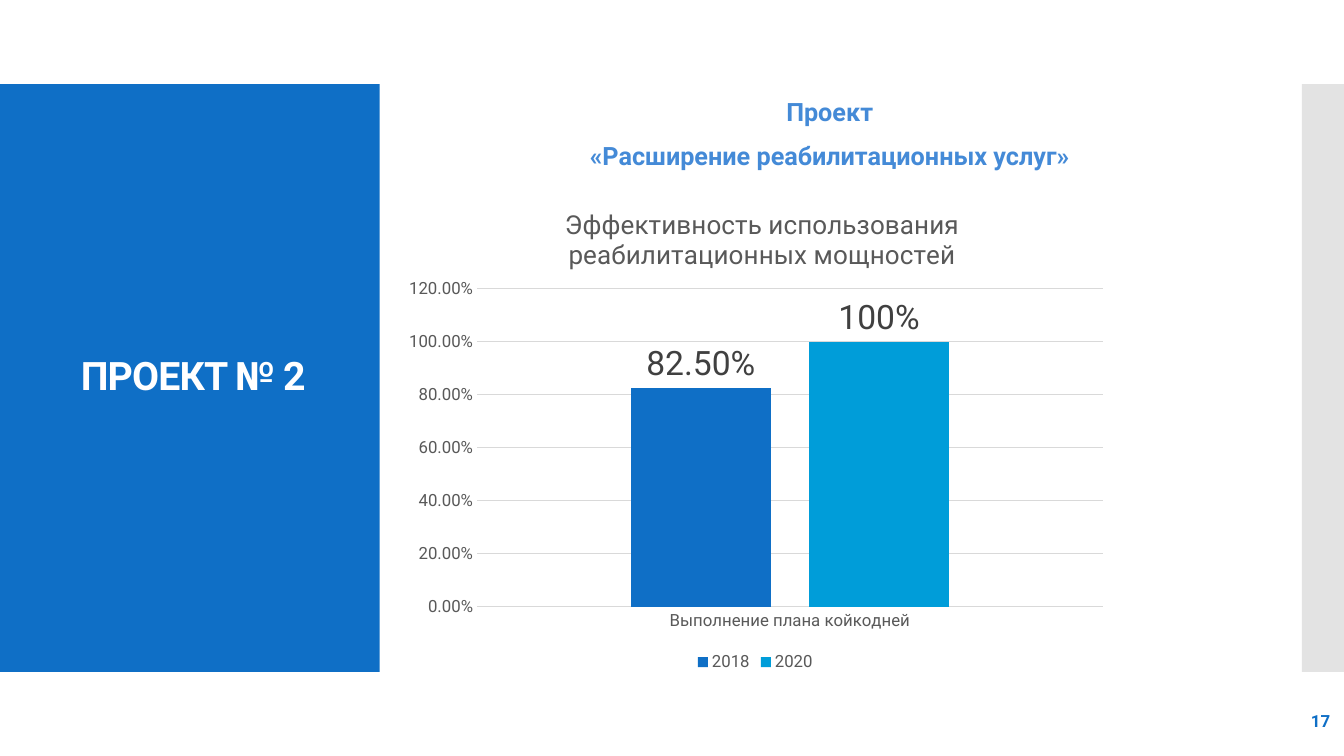
from lxml.etree import SubElement
from pptx import Presentation
from pptx.chart.data import CategoryChartData
from pptx.dml.color import RGBColor
from pptx.enum.chart import XL_CHART_TYPE, XL_LABEL_POSITION, XL_LEGEND_POSITION, XL_TICK_MARK
from pptx.enum.shapes import MSO_SHAPE
from pptx.enum.text import MSO_ANCHOR, MSO_AUTO_SIZE, PP_ALIGN
from pptx.oxml import parse_xml
from pptx.oxml.ns import nsdecls, qn
from pptx.util import Inches, Pt

COLORS = {
    "blue": "0F6FC6", "cyan": "009DD9", "heading": "448AD7", "white": "FFFFFF",
    "band": "C8C8C8", "grid": "D9D9D9", "axis": "595959", "label": "404040",
}
FONT = "Roboto"
COLUMNS, ROWS = 32, 18


def color(name):
    return RGBColor.from_string(COLORS[name])


def apply(target, values):
    for name, value in values.items():
        setattr(target, name, value)


def style_font(font, size, ink, bold=False):
    apply(font, {"name": FONT, "size": Pt(size), "bold": bold})
    font.color.rgb = color(ink)


def place(left, top, **size):
    """Manual chart layout, in shares of the chart's size."""
    values = {"xMode": "edge", "yMode": "edge", "x": left, "y": top, **size}
    inner = '<c:layoutTarget val="inner"/>' if size else ""
    marks = "".join(f'<c:{key} val="{value}"/>' for key, value in values.items())
    return parse_xml(f'<c:layout {nsdecls("c")}><c:manualLayout>{inner}{marks}'
                     "</c:manualLayout></c:layout>")


class SlideBuilder:
    def __init__(self, deck, page):
        self.page = page
        self.cell_width = deck.slide_width / COLUMNS
        self.cell_height = deck.slide_height / ROWS

    def box(self, left, top, width, height):
        return (round(left * self.cell_width), round(top * self.cell_height),
                round(width * self.cell_width), round(height * self.cell_height))

    def panel(self, grid, ink, opacity=None):
        shape = self.page.shapes.add_shape(MSO_SHAPE.RECTANGLE, *self.box(*grid))
        shape.shadow.inherit = False
        shape.fill.solid()
        shape.fill.fore_color.rgb = color(ink)
        shape.line.fill.background()
        if opacity:
            tone = shape.fill._xPr.find(qn("a:solidFill"))[0]
            SubElement(tone, qn("a:alpha")).set("val", str(opacity * 1000))
        # Panels lie behind the placeholders
        self.page.shapes._spTree.insert(2, shape._element)

    def text(self, shape, grid, lines, size, ink, align=PP_ALIGN.CENTER,
             anchor=MSO_ANCHOR.MIDDLE, before=0, spacing=0.9, tracking=None):
        apply(shape, dict(zip(("left", "top", "width", "height"), self.box(*grid))))
        frame = shape.text_frame
        frame.text = "\n".join(lines)
        apply(frame, {"word_wrap": True, "auto_size": MSO_AUTO_SIZE.NONE,
                      "vertical_anchor": anchor})
        for para in frame.paragraphs:
            apply(para, {"alignment": align, "line_spacing": spacing,
                         "space_before": Pt(before)})
            properties = para._p.get_or_add_pPr()
            properties.set("marL", "0")
            properties.set("indent", "0")
            SubElement(properties, qn("a:buNone"))
            for span in para.runs:
                style_font(span.font, size, ink, bold=True)
                if tracking:
                    span._r.get_or_add_rPr().set("spc", str(tracking))

    def column_chart(self, grid, title, category, series):
        data = CategoryChartData(number_format="0.00%")
        data.categories = [category]
        for name, value, *_ in series:
            data.add_series(name, [value])
        chart = self.page.shapes.add_chart(
            XL_CHART_TYPE.COLUMN_CLUSTERED, *self.box(*grid), data).chart
        style_font(chart.font, 12, "axis")

        # Title and legend
        chart.has_title = True
        chart.chart_title.text_frame.text = title
        style_font(chart.chart_title.text_frame.paragraphs[0].runs[0].font, 18.6, "axis")
        chart.has_legend = True
        apply(chart.legend, {"position": XL_LEGEND_POSITION.BOTTOM,
                             "include_in_layout": False})
        style_font(chart.legend.font, 12, "axis")

        # Axes
        for axis in (chart.category_axis, chart.value_axis):
            apply(axis, {"major_tick_mark": XL_TICK_MARK.NONE,
                         "minor_tick_mark": XL_TICK_MARK.NONE})
            style_font(axis.tick_labels.font, 12, "axis")
        apply(chart.value_axis, {"minimum_scale": 0, "maximum_scale": 1.2,
                                 "major_unit": 0.2})
        apply(chart.value_axis.tick_labels, {"number_format": "0.00%",
                                             "number_format_is_linked": False})
        chart.value_axis.format.line.fill.background()
        for line in (chart.category_axis.format.line,
                     chart.value_axis.major_gridlines.format.line):
            line.color.rgb = color("grid")
            line.width = Pt(0.75)

        # Columns and their labels
        plot = chart.plots[0]
        apply(plot, {"gap_width": 219, "overlap": -27, "vary_by_categories": False})
        for column, (_, _, ink, number_format) in zip(plot.series, series):
            column.format.fill.solid()
            column.format.fill.fore_color.rgb = color(ink)
            labels = column.data_labels
            apply(labels, {"show_value": True, "number_format": number_format,
                           "number_format_is_linked": False,
                           "position": XL_LABEL_POSITION.OUTSIDE_END})
            style_font(labels.font, 24, "label")

        # Places of the title and the plot inside the chart
        for owner, layout in (
                (chart.chart_title._element, place(0.23, 0.05)),
                (chart._chartSpace.chart.plotArea, place(0.115, 0.224, w=0.866, h=0.637))):
            for old in owner.findall(qn("c:layout")):
                owner.remove(old)
            text = owner.find(qn("c:tx"))
            owner.insert(0 if text is None else 1, layout)


def main():
    deck = Presentation()
    deck.slide_width, deck.slide_height = Inches(13.333), Inches(7.5)
    page = deck.slides.add_slide(deck.slide_layouts[1])
    builder = SlideBuilder(deck, page)

    # Side panels
    builder.panel((0, 2, 9.04, 14), "blue")
    builder.panel((31, 2, 1, 14), "band", opacity=50)

    # Texts
    builder.text(page.shapes.title, (-0.19, 2.95, 9.58, 12.07), ["ПРОЕКТ № 2"],
                 28, "white", tracking=-60)
    builder.text(page.placeholders[1], (10.49, 2.26, 18.53, 13.44),
                 ["Проект", "«Расширение реабилитационных услуг»"],
                 18, "heading", anchor=MSO_ANCHOR.TOP, before=12)
    number = page.shapes.add_textbox(0, 0, 0, 0)
    builder.text(number, (27.91, 16.68, 4, 0.96), ["17"], 12, "blue",
                 align=PP_ALIGN.RIGHT, spacing=1.0)

    # Chart
    builder.column_chart(
        (9.38, 4.22, 17.21, 11.88),
        "Эффективность использования реабилитационных мощностей",
        "Выполнение плана койкодней",
        [("2018", 0.825, "blue", "0.00%"), ("2020", 1, "cyan", "0%")])

    deck.save("out.pptx")


if __name__ == "__main__":
    main()
